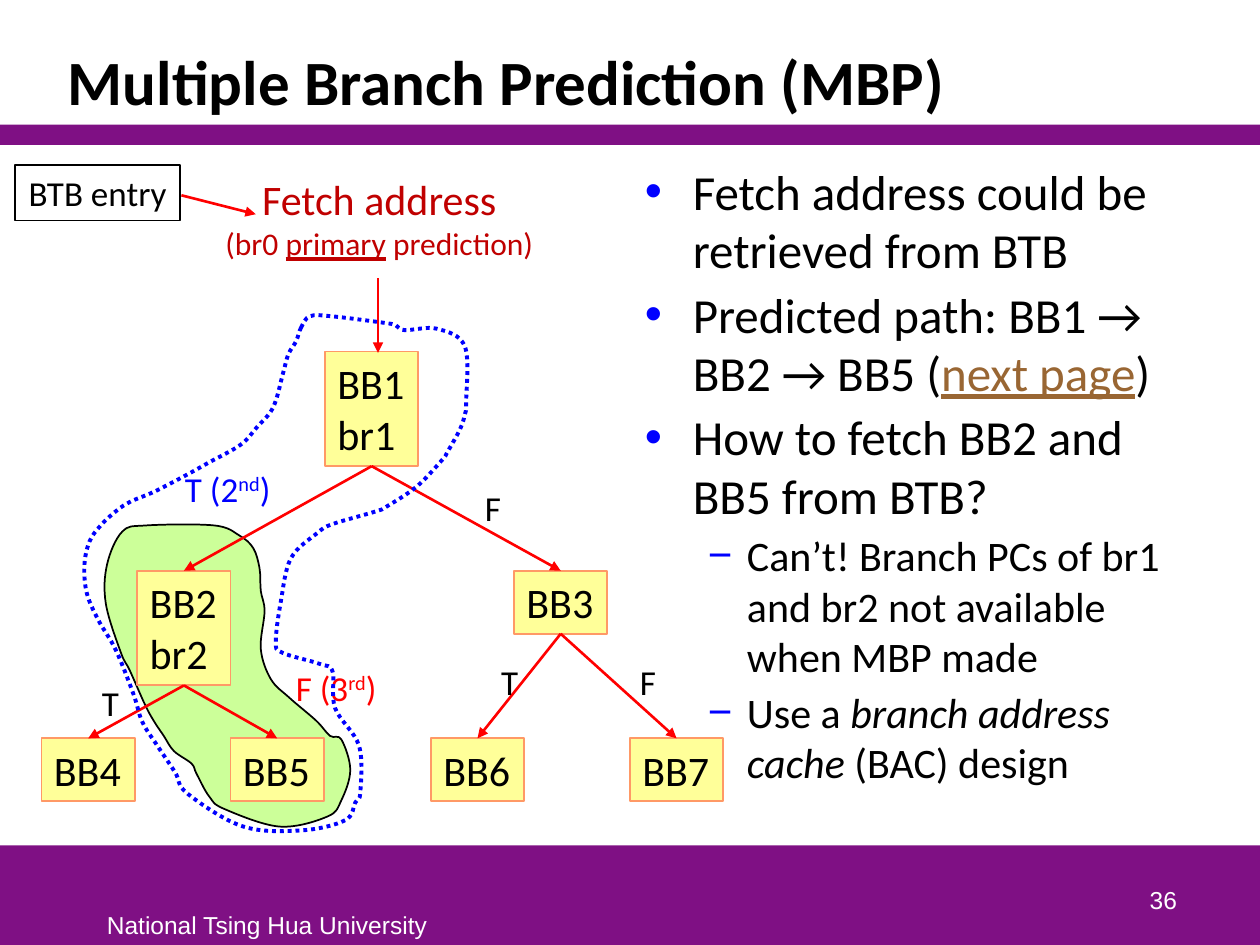
from dataclasses import dataclass
from lxml.etree import SubElement
from pptx import Presentation
from pptx.dml.color import RGBColor
from pptx.enum.dml import MSO_LINE
from pptx.enum.shapes import MSO_CONNECTOR, MSO_SHAPE
from pptx.enum.text import MSO_ANCHOR, PP_ALIGN
from pptx.oxml.ns import qn
from pptx.util import Inches, Pt


@dataclass(frozen=True)
class Theme:
    font: str = "Calibri"
    foot: str = "Arial"
    bar: str = "7F1084"
    ink: str = "000000"
    white: str = "FFFFFF"
    blue: str = "0000FF"
    red: str = "FF0000"
    dark: str = "C00000"
    link: str = "996633"
    box: str = "FFFF99"
    edge: str = "FF9966"
    green: str = "CCFF99"
    head: int = 36
    body: int = 28
    node: int = 24
    label: int = 20
    note: int = 18
    small: int = 14


T = Theme()

TITLE = "Multiple Branch Prediction (MBP)"
POINTS = [
    (0, ["Fetch address could be retrieved from BTB"]),
    (0, ["Predicted path: BB1 → BB2 → BB5 (", ("next page", "link"), ")"]),
    (0, ["How to fetch BB2 and BB5 from BTB?"]),
    (1, ["Can’t! Branch PCs of br1 and br2 not available when MBP made"]),
    (1, ["Use a ", ("branch address cache", "italic"), " (BAC) design"]),
]
LEVELS = [("•", 0.38, 0.38, T.body), ("−", 0.81, 0.31, T.node)]
BLOCKS = [
    (2.58, 2.79, ["BB1", "br1"]), (1.09, 4.53, ["BB2", "br2"]),
    (4.08, 4.53, ["BB3"]), (0.33, 5.86, ["BB4"]), (1.83, 5.86, ["BB5"]),
    (3.42, 5.86, ["BB6"]), (5.0, 5.86, ["BB7"]),
]
EDGES = [("BB1", "BB2"), ("BB1", "BB3"), ("BB2", "BB4"),
         ("BB2", "BB5"), ("BB3", "BB6"), ("BB3", "BB7")]
LABELS = [
    (1.37, 3.66, 1.54, ["T (2", ("nd", "super"), ")"], T.blue),
    (3.75, 3.81, 0.33, ["F"], T.ink),
    (0.71, 5.36, 0.34, ["T"], T.ink),
    (3.88, 5.19, 0.34, ["T"], T.ink),
    (2.25, 5.24, 1.54, ["F (3", ("rd", "super"), ")"], T.red),
    (4.98, 5.19, 0.33, ["F"], T.ink),
]
BLOB = [
    (0.97, 4.22), (1.16, 4.17), (1.7, 4.17), (1.9, 4.25), (2.01, 4.35),
    (2.06, 4.51), (2.07, 4.69), (2.1, 4.85), (2.07, 5.15), (2.15, 5.39),
    (2.3, 5.54), (2.51, 5.72), (2.62, 5.84), (2.71, 5.87), (2.78, 6.11),
    (2.71, 6.35), (2.6, 6.48), (2.22, 6.56), (1.78, 6.42), (1.66, 6.32),
    (1.56, 6.14), (1.52, 6.06), (1.38, 5.96), (1.3, 5.84), (1.22, 5.72),
    (1.15, 5.59), (1.03, 5.32), (0.96, 5.18), (0.84, 4.79), (0.85, 4.48),
]
ROUTE = [
    (2.39, 2.6), (2.35, 2.71), (2.29, 2.81), (2.25, 2.95), (2.17, 3.23),
    (2.04, 3.39), (1.91, 3.53), (1.66, 3.67), (1.48, 3.77), (1.23, 3.9),
    (1.04, 3.98), (0.93, 4.05), (0.8, 4.17), (0.71, 4.3), (0.67, 4.49),
    (0.69, 4.71), (0.78, 4.92), (0.92, 5.16), (1.06, 5.51), (1.13, 5.73),
    (1.25, 5.92), (1.39, 6.13), (1.49, 6.3), (1.93, 6.56), (2.4, 6.59),
    (2.74, 6.51), (2.82, 6.37), (2.86, 6.29), (2.85, 5.92), (2.66, 5.62),
    (2.64, 5.33), (2.54, 5.27), (2.24, 5.18), (2.19, 5.09), (2.23, 4.77),
    (2.31, 4.43), (2.52, 4.23), (2.64, 4.16), (2.98, 4.06), (3.07, 4.02),
    (3.31, 3.86), (3.51, 3.65), (3.55, 3.59), (3.65, 3.41), (3.69, 3.29),
    (3.7, 3.19), (3.69, 2.75), (3.47, 2.61), (3.21, 2.62),
    (3.14, 2.58), (3.03, 2.56), (2.63, 2.51), (2.46, 2.51),
]

deck = Presentation()
deck.slide_width, deck.slide_height = Inches(10), Inches(7.5)
page = deck.slides.add_slide(deck.slide_layouts[6]).shapes


def tint(code):
    return RGBColor.from_string(code)


def write(frame, paras, size=T.label, color=T.ink, font=T.font, bold=False,
          align=PP_ALIGN.LEFT, anchor=MSO_ANCHOR.TOP, wrap=True, space=None):
    frame.word_wrap, frame.vertical_anchor = wrap, anchor
    for num, runs in enumerate(paras):
        para = frame.add_paragraph() if num else frame.paragraphs[0]
        para.alignment, para.line_spacing = align, space
        for item in runs:
            text, kind = (item, "") if isinstance(item, str) else item
            run = para.add_run()
            run.text = text
            face = run.font
            face.name, face.size, face.bold = font, Pt(size), bold
            face.color.rgb = tint(T.link if kind == "link" else color)
            if kind in ("link", "under"):
                face.underline = True
            elif kind == "italic":
                face.italic = True
            elif kind == "super":
                face._element.set("baseline", "30000")
    return frame


def label(x, y, w, h, paras, **form):
    area = page.add_textbox(*map(Inches, (x, y, w, h)))
    return write(area.text_frame, paras, **form)


def paint(shape, fill=None, line=None, width=1):
    shape.shadow.inherit = False
    if fill:
        shape.fill.solid()
        shape.fill.fore_color.rgb = tint(fill)
    else:
        shape.fill.background()
    if line:
        shape.line.color.rgb = tint(line)
        shape.line.width = Pt(width)
    else:
        shape.line.fill.background()
    return shape


def rect(x, y, w, h, fill, line=None):
    area = map(Inches, (x, y, w, h))
    return paint(page.add_shape(MSO_SHAPE.RECTANGLE, *area), fill, line)


def arrow(start=(0, 0), end=(0, 0), source=None, target=None):
    wire = page.add_connector(MSO_CONNECTOR.STRAIGHT, *map(Inches, start + end))
    if source:
        wire.begin_connect(*source)
    if target:
        wire.end_connect(*target)
    wire.line.color.rgb = tint(T.red)
    wire.line.width = Pt(1.5)
    SubElement(wire.line._get_or_add_ln(), qn("a:tailEnd"), type="triangle")
    SubElement(wire._element.spPr, qn("a:effectLst"))


def curve(knots):
    dots = [tuple(map(Inches, knot)) for knot in knots]
    pen = page.build_freeform(*dots[0])
    pen.add_line_segments(dots[1:] + dots[:1], close=True)
    shape = pen.convert_to_shape()
    count = len(dots)
    for num, seg in enumerate(list(shape._element.iter(qn("a:lnTo")))):
        prev, here, goal, then = [dots[(num + off) % count] for off in (-1, 0, 1, 2)]
        out = [b + (c - a) / 6 for a, b, c in zip(prev, here, goal)]
        back = [c - (d - b) / 6 for b, c, d in zip(here, goal, then)]
        bend = seg.makeelement(qn("a:cubicBezTo"))
        for x, y in (out, back, goal):
            SubElement(bend, qn("a:pt"), x=str(round(x - shape.left)),
                       y=str(round(y - shape.top)))
        seg.getparent().replace(seg, bend)
    return shape


rect(0, 6.71, 10, 0.79, T.bar)
rect(0, 0.99, 10, 0.16, T.bar)
label(0.75, 7.17, 2.76, 0.33, [["National Tsing Hua University"]],
      size=T.small, color=T.white, font=T.foot, wrap=False)
label(0.44, 0.25, 8.97, 0.74, [[TITLE]], size=T.head, bold=True,
      anchor=MSO_ANCHOR.BOTTOM, space=0.85)

body = label(5.02, 1.23, 4.39, 5.43, [runs for _, runs in POINTS], size=T.body)
for num, (para, (level, _)) in enumerate(zip(body.paragraphs, POINTS)):
    sign, left, hang, size = LEVELS[level]
    para.level = level
    prop = para._p.get_or_add_pPr()
    prop.set("marL", str(Inches(left)))
    prop.set("indent", str(-Inches(hang)))
    SubElement(SubElement(prop, qn("a:buClr")), qn("a:srgbClr"), val=T.blue)
    SubElement(prop, qn("a:buFont"), typeface=T.foot)
    SubElement(prop, qn("a:buChar"), char=sign)
    if num:
        para.space_before = Pt(3)
    for run in para.runs:
        run.font.size = Pt(size)

label(7.36, 6.81, 2.08, 0.5, [["36"]], size=T.small, color=T.white,
      font=T.foot, align=PP_ALIGN.RIGHT, anchor=MSO_ANCHOR.BOTTOM)

paint(curve(BLOB), T.green, T.ink)
nodes = {}
for x, y, lines in BLOCKS:
    node = rect(x, y, 0.74, 0.09 + 0.41 * len(lines), T.box, T.edge)
    write(node.text_frame, [[line] for line in lines], size=T.node, wrap=False)
    nodes[lines[0]] = node
for top, low in EDGES:
    arrow(source=(nodes[top], 2), target=(nodes[low], 0))
for x, y, w, runs, color in LABELS:
    label(x, y, w, 0.44, [runs], color=color, wrap=w > 1)

arrow((3.0, 2.21), (3.0, 2.8))
fetch = label(1.67, 1.33, 2.68, 0.81,
              [["Fetch address"], ["(br0 ", ("primary", "under"), " prediction)"]],
              size=T.node, color=T.dark, align=PP_ALIGN.CENTER, wrap=False)
for run in fetch.paragraphs[1].runs:
    run.font.size = Pt(T.note)

route = paint(curve(ROUTE), line=T.blue, width=2.25)
route.line.dash_style = MSO_LINE.ROUND_DOT
entry = rect(0.12, 1.31, 1.31, 0.44, T.white, T.ink)
write(entry.text_frame, [["BTB entry"]], align=PP_ALIGN.CENTER, wrap=False)
arrow((1.44, 1.55), (2.03, 1.7))

deck.save("out.pptx")
